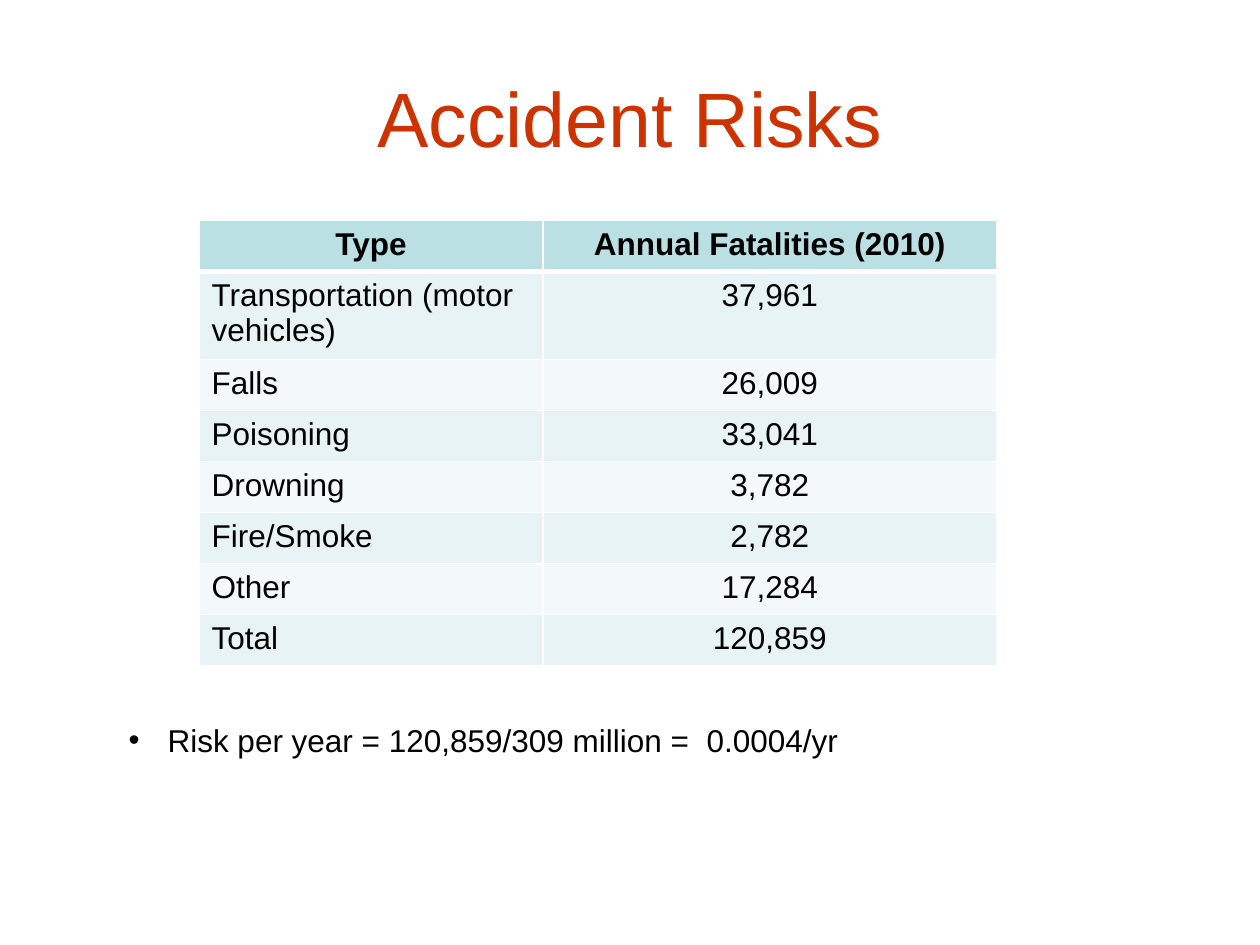
from pptx import Presentation
from pptx.dml.color import RGBColor
from pptx.enum import text
from pptx.oxml.ns import qn
from pptx.util import Inches, Pt
from lxml import etree

TITLE = "Accident Risks"
HEAD = ("Type", "Annual Fatalities (2010)")
RISKS = [
    ("Transportation (motor vehicles)", "37,961"),
    ("Falls", "26,009"),
    ("Poisoning", "33,041"),
    ("Drowning", "3,782"),
    ("Fire/Smoke", "2,782"),
    ("Other", "17,284"),
    ("Total", "120,859"),
]
NOTE = "Risk per year = 120,859/309 million =  0.0004/yr"
WIDTHS = (2.73, 3.6)
ROW = 0.405
BANDS = ("F3F9FA", "E7F3F4")


def style(par, size, color="000000", bold=False):
    font = par.font
    font.name, font.size, font.bold = "Arial", Pt(size), bold
    font.color.rgb = RGBColor.from_string(color)


def place(shape, left, top, width, height):
    shape.left, shape.top = Inches(left), Inches(top)
    shape.width, shape.height = Inches(width), Inches(height)


def border(cell, sides):
    props = cell._tc.get_or_add_tcPr()
    for spot, (side, width) in enumerate(sides.items()):
        line = etree.Element(qn("a:ln" + side), w=str(Pt(width)))
        fill = etree.SubElement(line, qn("a:solidFill"))
        etree.SubElement(fill, qn("a:srgbClr"), val="FFFFFF")
        props.insert(spot, line)


def add_risks(slide):
    rows = [HEAD] + RISKS
    frame = slide.shapes.add_table(
        len(rows), len(HEAD), Inches(1.58), Inches(1.75),
        Inches(sum(WIDTHS)), Inches(ROW * len(rows)))
    table = frame.table
    for col, width in zip(table.columns, WIDTHS):
        col.width = Inches(width)
    for r, row in enumerate(rows):
        for c, value in enumerate(row):
            cell = table.cell(r, c)
            cell.text = value
            cell.fill.solid()
            cell.fill.fore_color.rgb = RGBColor.from_string(
                BANDS[r % 2] if r else "BBE0E3")
            par = cell.text_frame.paragraphs[0]
            style(par, 18, bold=r == 0)
            if r == 0 or c == 1:
                par.alignment = text.PP_ALIGN.CENTER
            border(cell, {"L": 1, "R": 1, "T": 3 if r == 1 else 1,
                          "B": 3 if r == 0 else 1})


def add_note(body):
    place(body, 0.92, 5.67, 6.92, 0.4)
    frame = body.text_frame
    frame.text = NOTE
    frame.auto_size = text.MSO_AUTO_SIZE.SHAPE_TO_FIT_TEXT
    par = frame.paragraphs[0]
    par.space_before = Pt(0)
    props = par._p.get_or_add_pPr()
    props.set("marL", str(Inches(0.31)))
    props.set("indent", str(-Inches(0.31)))
    etree.SubElement(props, qn("a:buFont"), typeface="Arial")
    etree.SubElement(props, qn("a:buChar"), char="•")
    style(par, 18)


def main():
    deck = Presentation()
    deck.slide_width, deck.slide_height = Inches(10), Inches(7.5)
    slide = deck.slides.add_slide(deck.slide_layouts[1])
    title, body = slide.placeholders
    place(title, 0.5, 0.3, 9, 1.25)
    title.text_frame.text = TITLE
    title.text_frame.vertical_anchor = text.MSO_ANCHOR.MIDDLE
    head = title.text_frame.paragraphs[0]
    head.alignment = text.PP_ALIGN.CENTER
    style(head, 44, "CC3300")
    add_risks(slide)
    add_note(body)
    deck.save("out.pptx")


if __name__ == "__main__":
    main()
